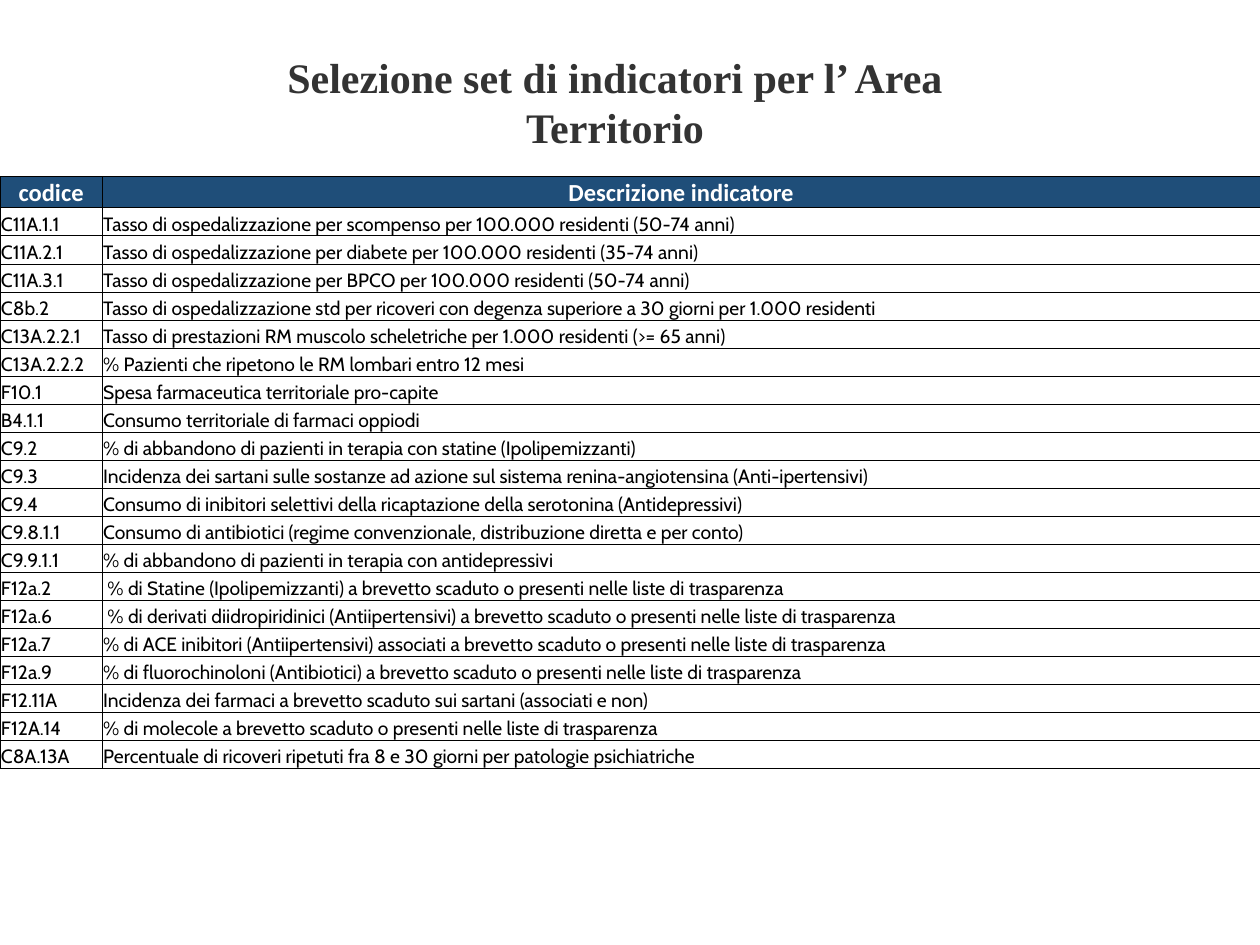
import pptx
import pptx.dml.color
import pptx.enum.text
import pptx.oxml
import pptx.oxml.ns
import pptx.util
from pptx.util import Cm

COLORS = {
    "title": "333333",
    "header_fill": "1F4E79",
    "header_text": "FFFFFF",
    "text": "000000",
    "border": "000000",
}

HEADER = ("codice", "Descrizione indicatore")
INDICATORS = [
    ("C11A.1.1", "Tasso di ospedalizzazione per scompenso per 100.000 residenti (50-74 anni)"),
    ("C11A.2.1", "Tasso di ospedalizzazione per diabete per 100.000 residenti (35-74 anni)"),
    ("C11A.3.1", "Tasso di ospedalizzazione per BPCO per 100.000 residenti (50-74 anni)"),
    ("C8b.2", "Tasso di ospedalizzazione std per ricoveri con degenza superiore a 30 giorni per 1.000 residenti"),
    ("C13A.2.2.1", "Tasso di prestazioni RM muscolo scheletriche per 1.000 residenti (>= 65 anni)"),
    ("C13A.2.2.2", "% Pazienti che ripetono le RM lombari entro 12 mesi"),
    ("F10.1", "Spesa farmaceutica territoriale pro-capite"),
    ("B4.1.1", "Consumo territoriale di farmaci oppiodi"),
    ("C9.2", "% di abbandono di pazienti in terapia con statine (Ipolipemizzanti)"),
    ("C9.3", "Incidenza dei sartani sulle sostanze ad azione sul sistema renina-angiotensina (Anti-ipertensivi)"),
    ("C9.4", "Consumo di inibitori selettivi della ricaptazione della serotonina (Antidepressivi)"),
    ("C9.8.1.1", "Consumo di antibiotici (regime convenzionale, distribuzione diretta e per conto)"),
    ("C9.9.1.1", "% di abbandono di pazienti in terapia con antidepressivi"),
    ("F12a.2", " % di Statine (Ipolipemizzanti) a brevetto scaduto o presenti nelle liste di trasparenza"),
    ("F12a.6", " % di derivati diidropiridinici (Antiipertensivi) a brevetto scaduto o presenti nelle liste di trasparenza"),
    ("F12a.7", "% di ACE inibitori (Antiipertensivi) associati a brevetto scaduto o presenti nelle liste di trasparenza"),
    ("F12a.9", "% di fluorochinoloni (Antibiotici) a brevetto scaduto o presenti nelle liste di trasparenza"),
    ("F12.11A", "Incidenza dei farmaci a brevetto scaduto sui sartani (associati e non)"),
    ("F12A.14", "% di molecole a brevetto scaduto o presenti nelle liste di trasparenza"),
    ("C8A.13A", "Percentuale di ricoveri ripetuti fra 8 e 30 giorni per patologie psichiatriche"),
]


def rgb(name):
    return pptx.dml.color.RGBColor.from_string(COLORS[name])


def write(text_frame, text, font_name, size, color, bold=False, centered=False):
    text_frame.text = text
    paragraph = text_frame.paragraphs[0]
    if centered:
        paragraph.alignment = pptx.enum.text.PP_ALIGN.CENTER
    font = paragraph.runs[0].font
    font.name = font_name
    font.size = pptx.util.Pt(size)
    font.bold = bold
    font.color.rgb = rgb(color)


def set_borders(cell):
    properties = cell._tc.get_or_add_tcPr()
    namespace = pptx.oxml.ns.nsdecls("a")
    # Borders come before the fill in the cell properties
    for position, side in enumerate(("lnL", "lnR", "lnT", "lnB")):
        line = pptx.oxml.parse_xml(
            f'<a:{side} {namespace} w="{pptx.util.Pt(0.5)}"><a:solidFill>'
            f'<a:srgbClr val="{COLORS["border"]}"/></a:solidFill></a:{side}>'
        )
        properties.insert(position, line)


def fill_cell(cell, text, is_header):
    cell.margin_left = cell.margin_right = cell.margin_top = Cm(0.02)
    cell.margin_bottom = 0
    anchor = pptx.enum.text.MSO_ANCHOR
    if is_header:
        cell.vertical_anchor = anchor.MIDDLE
        cell.fill.solid()
        cell.fill.fore_color.rgb = rgb("header_fill")
        write(cell.text_frame, text, "Calibri", 14, "header_text", bold=True, centered=True)
    else:
        cell.vertical_anchor = anchor.BOTTOM
        cell.fill.background()
        write(cell.text_frame, text, "Cabin", 11, "text")
    set_borders(cell)


def add_title(slide, text):
    shape = slide.shapes.add_textbox(Cm(3.75), Cm(0.91), Cm(17.3), Cm(2.2))
    shape.text_frame.word_wrap = True
    write(shape.text_frame, text, "Times New Roman", 24, "title", bold=True, centered=True)


def add_indicator_table(slide, slide_width):
    rows = [HEADER] + INDICATORS
    height, header_height, code_width = Cm(11.94), Cm(0.63), Cm(2.06)
    shape = slide.shapes.add_table(len(rows), len(HEADER), 0, Cm(3.56), slide_width, height)
    table = shape.table
    table.first_row = table.horz_banding = False
    table.columns[0].width = code_width
    table.columns[1].width = slide_width - code_width
    row_height = (height - header_height) // len(INDICATORS)
    for row_index, values in enumerate(rows):
        is_header = row_index == 0
        table.rows[row_index].height = header_height if is_header else row_height
        for column_index, text in enumerate(values):
            fill_cell(table.cell(row_index, column_index), text, is_header)


def main():
    presentation = pptx.Presentation()
    presentation.slide_width, presentation.slide_height = Cm(25.4), Cm(19.05)
    slide = presentation.slides.add_slide(presentation.slide_layouts[6])

    # Indicators by code
    add_indicator_table(slide, presentation.slide_width)
    # Heading above the table
    add_title(slide, "Selezione set di indicatori per l’ Area Territorio")

    presentation.save("out.pptx")


if __name__ == "__main__":
    main()
